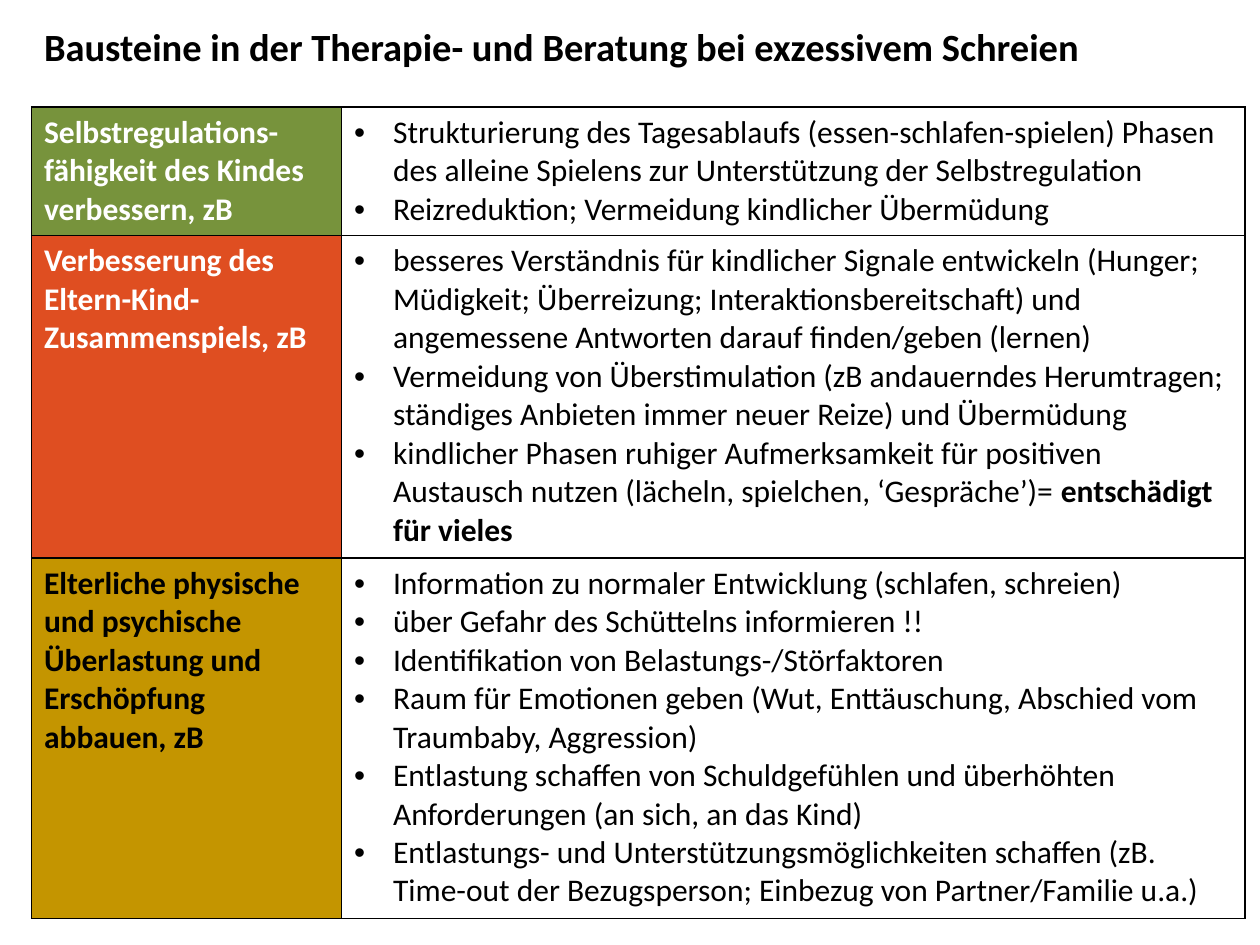
from lxml.etree import SubElement
from pptx import Presentation
from pptx.dml.color import RGBColor
from pptx.enum.text import MSO_ANCHOR, PP_ALIGN
from pptx.oxml.ns import qn
from pptx.util import Inches, Pt

BLACK, WHITE = "000000", "FFFFFF"
COLUMN_WIDTHS = [2.46, 7.17]
ROW_HEIGHTS = [1.02, 2.56, 2.86]

# Heading, its fill and text colour, and measures made of (text, bold) runs
BUILDING_BLOCKS = [
    ("Selbstregulations-fähigkeit des Kindes verbessern, zB", "77933C", WHITE, [
        [("Strukturierung des Tagesablaufs (essen-schlafen-spielen) Phasen des "
          "alleine Spielens zur Unterstützung der Selbstregulation", False)],
        [("Reizreduktion; Vermeidung kindlicher Übermüdung", False)],
    ]),
    ("Verbesserung des Eltern-Kind-Zusammenspiels, zB", "DF4E21", WHITE, [
        [("besseres Verständnis für kindlicher Signale entwickeln (Hunger; "
          "Müdigkeit; Überreizung; Interaktionsbereitschaft) und angemessene "
          "Antworten darauf finden/geben (lernen)", False)],
        [("Vermeidung von Überstimulation (zB andauerndes Herumtragen; ständiges "
          "Anbieten immer neuer Reize) und Übermüdung", False)],
        [("kindlicher Phasen ruhiger Aufmerksamkeit für positiven Austausch "
          "nutzen (lächeln, spielchen, ‘Gespräche’)=", False),
         (" entschädigt für vieles", True)],
    ]),
    ("Elterliche physische und psychische Überlastung und Erschöpfung abbauen, zB",
     "C49500", BLACK, [
        [("Information zu normaler Entwicklung (schlafen, schreien)", False)],
        [("über Gefahr des Schüttelns informieren !!", False)],
        [("Identifikation von Belastungs-/Störfaktoren", False)],
        [("Raum für Emotionen geben (Wut, Enttäuschung, Abschied vom Traumbaby, "
          "Aggression)", False)],
        [("Entlastung schaffen von Schuldgefühlen und überhöhten Anforderungen "
          "(an sich, an das Kind)", False)],
        [("Entlastungs- und Unterstützungsmöglichkeiten schaffen (zB. Time-out der "
          "Bezugsperson; Einbezug von Partner/Familie u.a.)", False)],
    ]),
]


def rgb(color):
    return RGBColor.from_string(color)


def add_text(paragraph, text, size=18, color=BLACK, bold=False):
    run = paragraph.add_run()
    run.text = text
    font = run.font
    font.name, font.size, font.bold = "Calibri", Pt(size), bold
    font.color.rgb = rgb(color)


def add_bullet(paragraph, indent=0.31):
    properties = paragraph._p.get_or_add_pPr()
    properties.set("marL", str(Inches(indent)))
    properties.set("indent", str(Inches(-indent)))
    SubElement(properties, qn("a:buFont"), typeface="Arial")
    SubElement(properties, qn("a:buChar"), char="•")


def style_cell(cell, fill):
    """Give the cell a thin black border on every side and a solid fill."""
    properties = cell._tc.get_or_add_tcPr()
    for side in ("lnL", "lnR", "lnT", "lnB"):
        line = SubElement(properties, qn(f"a:{side}"), w=str(Pt(1)))
        SubElement(SubElement(line, qn("a:solidFill")), qn("a:srgbClr"), val=BLACK)
    cell.fill.solid()
    cell.fill.fore_color.rgb = rgb(fill)


def fill_measures(cell, measures):
    frame = cell.text_frame
    for index, runs in enumerate(measures):
        paragraph = frame.add_paragraph() if index else frame.paragraphs[0]
        add_bullet(paragraph)
        for text, bold in runs:
            add_text(paragraph, text, bold=bold)


def add_title(slide, text):
    title = slide.shapes.title
    title.left, title.top = Inches(0.25), Inches(-0.26)
    title.width, title.height = Inches(9), Inches(1.25)
    title.text_frame.vertical_anchor = MSO_ANCHOR.MIDDLE
    paragraph = title.text_frame.paragraphs[0]
    paragraph.alignment = PP_ALIGN.LEFT
    add_text(paragraph, text, size=22, bold=True)


def add_building_blocks(slide):
    table = slide.shapes.add_table(
        len(ROW_HEIGHTS), len(COLUMN_WIDTHS), Inches(0.25), Inches(0.85),
        Inches(sum(COLUMN_WIDTHS)), Inches(sum(ROW_HEIGHTS))).table
    table.first_row = table.horz_banding = False
    for column, width in zip(table.columns, COLUMN_WIDTHS):
        column.width = Inches(width)
    for row, height, block in zip(table.rows, ROW_HEIGHTS, BUILDING_BLOCKS):
        row.height = Inches(height)
        heading, fill, color, measures = block
        heading_cell, measures_cell = row.cells
        style_cell(heading_cell, fill)
        add_text(heading_cell.text_frame.paragraphs[0], heading,
                 color=color, bold=True)
        style_cell(measures_cell, WHITE)
        fill_measures(measures_cell, measures)


def main():
    deck = Presentation()
    deck.slide_width, deck.slide_height = Inches(10), Inches(7.5)
    slide = deck.slides.add_slide(deck.slide_layouts[5])
    add_title(slide, "Bausteine in der Therapie- und Beratung bei exzessivem Schreien")
    add_building_blocks(slide)
    deck.save("out.pptx")


if __name__ == "__main__":
    main()
